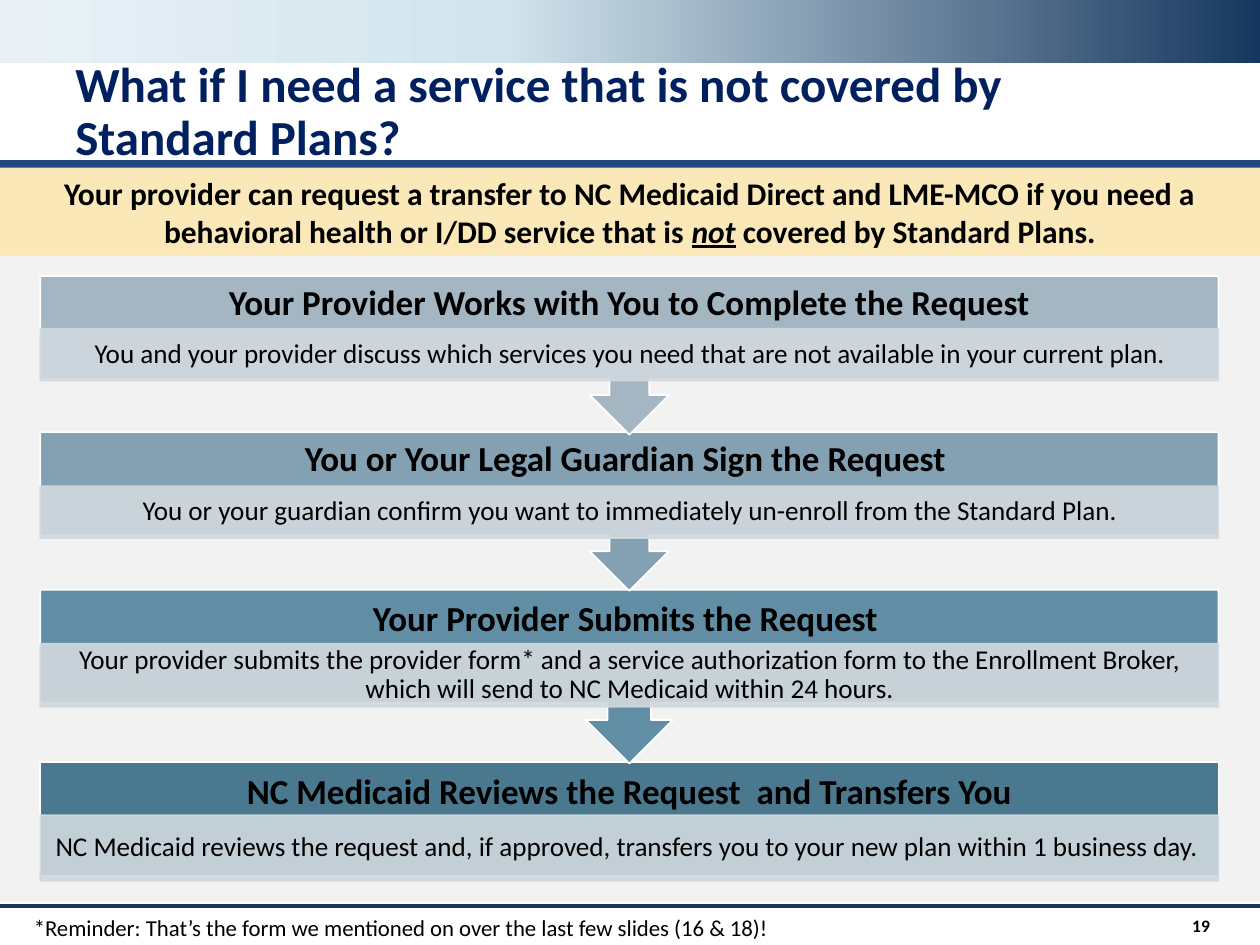
"""Build a slide on requesting a service that Standard Plans do not cover."""
import copy

import pptx
import pptx.dml.color
import pptx.enum.shapes
import pptx.enum.text
import pptx.oxml.ns
import pptx.util
from lxml import etree

Inches = pptx.util.Inches
Pt = pptx.util.Pt
Kind = pptx.enum.shapes.MSO_SHAPE
Align = pptx.enum.text.PP_ALIGN
Anchor = pptx.enum.text.MSO_ANCHOR
qn = pptx.oxml.ns.qn
rgb = pptx.dml.color.RGBColor.from_string

deck = pptx.Presentation()
deck.slide_width, deck.slide_height = Inches(10), Inches(7.5)
shapes = deck.slides.add_slide(deck.slide_layouts[6]).shapes


def block(kind, place, fill, edge=None):
    """Add a flat filled shape."""
    shape = shapes.add_shape(kind, *map(Inches, place))
    shape.shadow.inherit = False
    shape.fill.solid()
    shape.fill.fore_color.rgb = rgb(fill)
    if edge:
        shape.line.color.rgb = rgb(edge)
        shape.line.width = Pt(1)
    else:
        shape.line.fill.background()
    return shape


def write(shape, runs, size, bold=False, color="000000", align=Align.CENTER,
          anchor=Anchor.MIDDLE, inset=(0.1, 0.05), space=None, wrap=True):
    """Set one paragraph of text in a shape."""
    frame = shape.text_frame
    frame.word_wrap = wrap
    frame.vertical_anchor = anchor
    frame.margin_left = frame.margin_right = Inches(inset[0])
    frame.margin_top = frame.margin_bottom = Inches(inset[1])
    para = frame.paragraphs[0]
    para.alignment = align
    para.line_spacing = space
    for text in runs:
        para.add_run().text = text
    para.font.name = "Calibri"
    para.font.size = Pt(size)
    para.font.bold = bold
    para.font.color.rgb = rgb(color)
    return para


banner = block(Kind.RECTANGLE, (0, 0, 10, 0.5), "17375E")
banner.fill.gradient()
banner.fill.gradient_angle = 180
stops = banner.fill.gradient_stops
first = banner._element.spPr.find(".//" + qn("a:gs"))
first.addnext(copy.deepcopy(first))
stops = banner.fill.gradient_stops
for stop, (spot, tint) in zip(
        stops, [(0, "17375E"), (0.6, "D3E4ED"), (1, "E9F1F6")]):
    stop.position = spot
    stop.color.rgb = rgb(tint)

block(Kind.RECTANGLE, (0, 1.3, 10, 5.86), "F2F2F2")

for y, tint, width in [(1.29, "002060", 2), (7.19, "17375E", 2.25),
                       (1.3, "1F497D", 4.5)]:
    rule = shapes.add_connector(pptx.enum.shapes.MSO_CONNECTOR.STRAIGHT,
                                0, Inches(y), Inches(10), Inches(y))
    rule.line.color.rgb = rgb(tint)
    rule.line.width = Pt(width)
    etree.SubElement(rule._element.spPr, qn("a:effectLst"))

title = shapes.add_textbox(*map(Inches, (0.5, 0.43, 9, 0.87)))
write(title, ["What if I need a service that is not covered by Standard Plans?"],
      28, True, "002060", Align.LEFT, Anchor.TOP, space=0.9)

number = shapes.add_textbox(*map(Inches, (9.08, 7.19, 0.62, 0.31)))
write(number, ["19"], 10, True, align=Align.RIGHT)

intro = block(Kind.RECTANGLE, (0, 1.33, 10, 0.7), "FAE8B8")
para = write(intro, [
    "Your provider can request a transfer to NC Medicaid Direct and LME-MCO "
    "if you need a behavioral health or I/DD service that is ",
    "not", " covered by Standard Plans."], 18, True, inset=(0.3, 0.06))
para.runs[1].font.italic = True
para.runs[1].font.underline = True

left, wide = 0.32, 9.35
steps = [
    (2.19, 1.26, 0.44, 2.61, 0.41, "A3B6C1",
     "Your Provider Works with You to Complete the Request",
     "You and your provider discuss which services you need that are not "
     "available in your current plan."),
    (3.43, 1.26, 0.44, 3.86, 0.41, "83A1B2",
     "You or Your Legal Guardian Sign the Request ",
     "You or your guardian confirm you want to immediately un-enroll from "
     "the Standard Plan."),
    (4.68, 1.38, 0.49, 5.11, 0.5, "628EA5",
     "Your Provider Submits the Request ",
     "Your provider submits the provider form* and a service authorization "
     "form to the Enrollment Broker, which will send to NC Medicaid within "
     "24 hours."),
    (6.05, 0.9, 0.49, 6.47, 0.52, "4A788E",
     "NC Medicaid Reviews the Request  and Transfers You",
     "NC Medicaid reviews the request and, if approved, transfers you to "
     "your new plan within 1 business day. "),
]
for step in reversed(steps):
    top, tall, head, low, deep, tint, name, detail = step
    kind = Kind.RECTANGLE if step is steps[-1] else Kind.DOWN_ARROW_CALLOUT
    block(kind, (left, top, wide, tall), tint, "FFFFFF")
    label = shapes.add_textbox(*map(Inches, (left, top, wide, head)))
    write(label, [name], 20, True, inset=(0.16, 0), space=0.9)
    panel = block(Kind.RECTANGLE, (left, low, wide, deep), "D1D9DE", "D1D9DE")
    for color in panel._element.spPr.iter(qn("a:srgbClr")):
        etree.SubElement(color, qn("a:alpha"), val="90000")
    write(panel, [detail], 15.5, inset=(0.12, 0.02), space=0.9)

note = shapes.add_textbox(*map(Inches, (0.17, 7.2, 6.13, 0.32)))
write(note, ["*Reminder: That’s the form we mentioned on over the last few "
             "slides (16 & 18)!"],
      13, align=Align.LEFT, anchor=Anchor.TOP, wrap=False)

deck.save("out.pptx")
